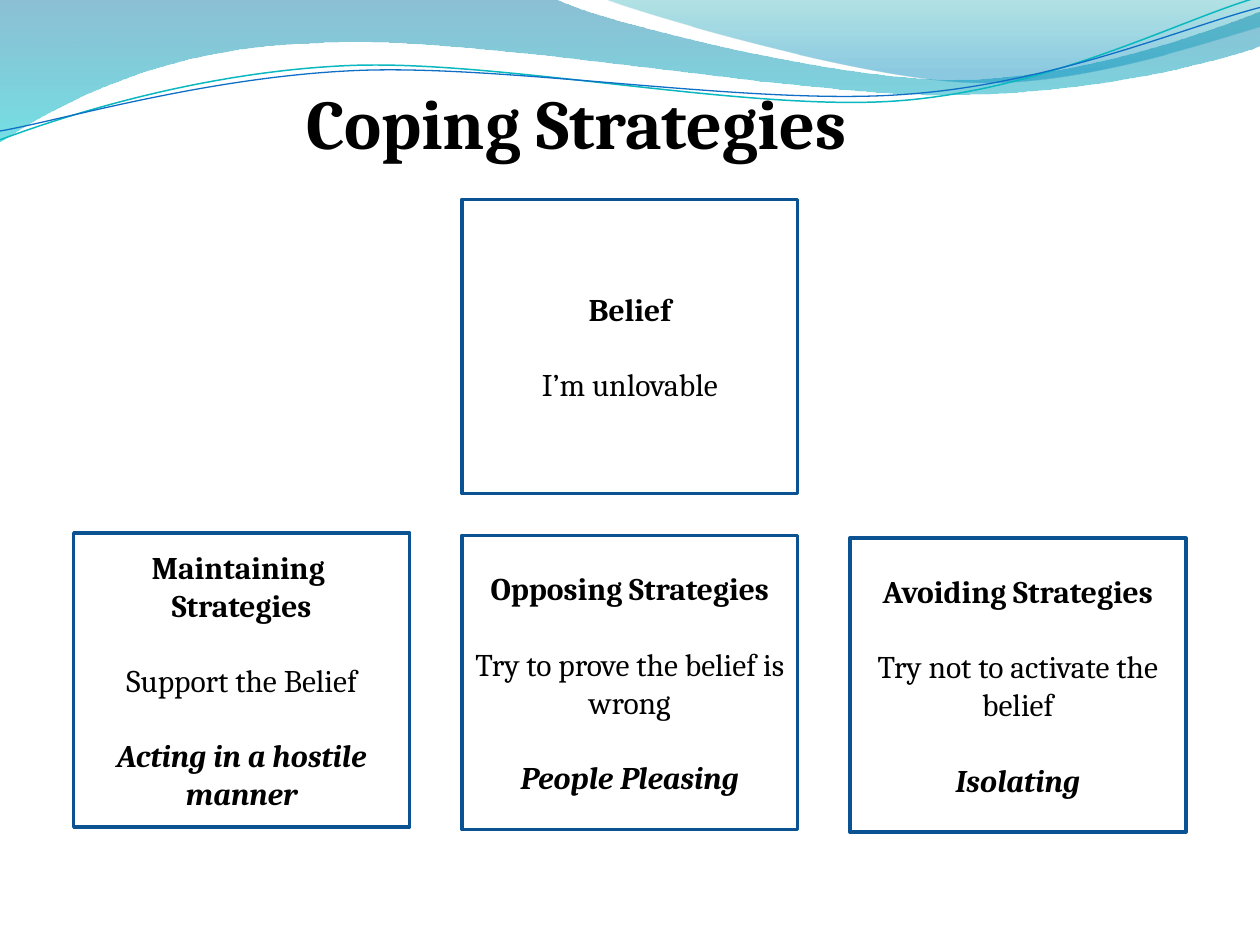
from itertools import chain
from math import cos, radians, sin

from lxml.etree import SubElement
from pptx import Presentation
from pptx.dml.color import RGBColor
from pptx.enum.shapes import MSO_SHAPE
from pptx.enum.text import MSO_ANCHOR, MSO_AUTO_SIZE, PP_ALIGN
from pptx.oxml.ns import qn
from pptx.util import Inches, Pt

TITLE_ONLY = 5

# Each outline is a start point followed by lines (one point) and Bezier curves (three points).
BROAD_WAVE = [
    [(0, 0)], [(4.4, -0.01)],
    [(4.76, 0.17), (6.64, 0.63), (7.58, 0.63)],
    [(8.53, 0.63), (9.58, 0.26), (10, 0.09)],
    [(10.01, 0.36)],
    [(9.83, 0.44), (8.7, 0.76), (7.46, 0.75)],
    [(6.22, 0.75), (3.82, 0.28), (2.57, 0.34)],
    [(1.29, 0.36), (0.46, 0.83), (-0.01, 1.13)],
    [(0, 0)],
]
RIGHT_WAVE = [
    [(4.79, -0.01)],
    [(5.09, 0.11), (6.82, 0.62), (7.69, 0.65)],
    [(8.56, 0.69), (9.61, 0.32), (10, 0.21)],
    [(10, 0)], [(4.79, -0.01)],
]
TEAL_STROKE = [
    [(0, 1.11)],
    [(0.48, 0.93), (1.58, 0.57), (2.77, 0.52)],
    [(3.95, 0.47), (5.93, 0.89), (7.13, 0.8)],
    [(8.33, 0.71), (9.38, 0.15), (9.98, -0.02)],
]
BLUE_STROKE = [
    [(0, 1.04)],
    [(0.47, 0.96), (1.64, 0.61), (2.83, 0.56)],
    [(4.03, 0.51), (5.97, 0.84), (7.17, 0.75)],
    [(8.36, 0.67), (9.41, 0.21), (10, 0.06)],
]
STROKE_TILT = 357.3

# Heading lines, explanation, example; one strategy a column
STRATEGIES = [
    (["Maintaining ", "Strategies"], "Support the Belief", "Acting in a hostile manner"),
    (["Opposing Strategies"], "Try to prove the belief is wrong", "People Pleasing"),
    (["Avoiding Strategies"], "Try not to activate the belief", "Isolating"),
]


def rgb(hex_colour):
    return RGBColor.from_string(hex_colour)


def untilt(outline, centre, tilt):
    """Turn an outline back by its tilt, so that the shape's rotation restores it."""
    angle, (cx, cy) = radians(-tilt), centre
    return [[(cx + (x - cx) * cos(angle) - (y - cy) * sin(angle),
              cy + (x - cx) * sin(angle) + (y - cy) * cos(angle)) for x, y in step]
            for step in outline]


class CopingSlide:
    font = "Cambria"
    ink = "000000"
    paper = "FFFFFF"
    border = "0B5292"
    body_size = 18
    title_size = 40
    box_width, box_height = 8 / 3, 7 / 3
    grid_left, grid_top = 0.585, 19 / 12
    column_pitch, row_pitch = 3.08, 8 / 3

    def __init__(self, presentation):
        self.slide = presentation.slides.add_slide(presentation.slide_layouts[TITLE_ONLY])

    def style(self, paragraph, size, bold=False, italic=False):
        for run in paragraph.runs:
            font = run.font
            font.name, font.size = self.font, Pt(size)
            font.bold, font.italic = bold, italic
            font.color.rgb = rgb(self.ink)

    def outline(self, steps, close):
        """Draw a freeform whose three-point steps become true Bezier curves."""
        start, *rest = [(Inches(x), Inches(y)) for x, y in chain.from_iterable(steps)]
        builder = self.slide.shapes.build_freeform(*start)
        builder.add_line_segments(rest, close=close)
        shape = builder.convert_to_shape()
        shape.shadow.inherit = False
        drawn_path = next(shape.element.iter(qn("a:path")))
        segments = iter(drawn_path.findall(qn("a:lnTo")))
        for step in steps[1:]:
            lines = [next(segments) for _ in step]
            if len(lines) == 3:
                curve = SubElement(drawn_path, qn("a:cubicBezTo"))
                lines[0].addprevious(curve)
                for line in lines:
                    curve.append(line[0])
                    drawn_path.remove(line)
        return shape

    def wave(self, steps, stops):
        """Draw a closed wave; stops are (position, colour, opacity) from top to bottom."""
        shape = self.outline(steps, close=True)
        shape.line.fill.background()
        shape.fill.gradient()
        shape.fill.gradient_angle = 270
        for stop, (position, colour, _) in zip(shape.fill.gradient_stops, stops):
            stop.position = position
            stop.color.rgb = rgb(colour)
        gradient_colours = shape.element.spPr.iter(qn("a:srgbClr"))
        for colour_element, (_, _, opacity) in zip(gradient_colours, stops):
            SubElement(colour_element, qn("a:alpha")).set("val", str(opacity * 1000))

    def stroke(self, steps, centre, colour, width):
        shape = self.outline(untilt(steps, centre, STROKE_TILT), close=False)
        shape.rotation = STROKE_TILT
        shape.fill.background()
        shape.line.color.rgb = rgb(colour)
        shape.line.width = Pt(width)

    def title(self, text):
        title = self.slide.shapes.title
        self.slide.shapes.element.append(title.element)  # in front of the waves
        title.left, title.top = Inches(2.33), Inches(0.58)
        title.width, title.height = Inches(5.33), Inches(0.77)
        frame = title.text_frame
        frame.text = text
        frame.auto_size = MSO_AUTO_SIZE.NONE
        frame.vertical_anchor = MSO_ANCHOR.TOP
        frame.paragraphs[0].alignment = PP_ALIGN.LEFT
        self.style(frame.paragraphs[0], self.title_size, bold=True)

    def box(self, column, row, heading, explanation, example=None):
        shape = self.slide.shapes.add_shape(
            MSO_SHAPE.RECTANGLE,
            Inches(self.grid_left + column * self.column_pitch),
            Inches(self.grid_top + row * self.row_pitch),
            Inches(self.box_width), Inches(self.box_height))
        shape.shadow.inherit = False
        shape.fill.solid()
        shape.fill.fore_color.rgb = rgb(self.paper)
        shape.line.color.rgb = rgb(self.border)
        shape.line.width = Pt(2)

        frame = shape.text_frame
        frame.word_wrap = True
        frame.vertical_anchor = MSO_ANCHOR.MIDDLE
        parts = heading + [explanation] + ([example] if example else [])
        frame.text = "\n".join(parts)
        for i, paragraph in enumerate(frame.paragraphs):
            paragraph.alignment = PP_ALIGN.CENTER
            if i >= len(heading):
                paragraph.space_before = Pt(21.5)
            self.style(paragraph, self.body_size,
                       bold=i != len(heading), italic=i > len(heading))


def main():
    presentation = Presentation()
    presentation.slide_width, presentation.slide_height = Inches(10), Inches(7.5)
    slide = CopingSlide(presentation)
    slide.wave(BROAD_WAVE, [(0, "0074A1", 45), (1, "00C6CF", 55)])
    slide.wave(RIGHT_WAVE, [(0, "00A1A9", 30), (0.8, "008BBF", 45)])
    slide.stroke(TEAL_STROKE, (4.99, 0.58), "0AB8BF", 0.85)
    slide.stroke(BLUE_STROKE, (5, 0.59), "0F6FC6", 0.75)
    for column, strategy in enumerate(STRATEGIES):
        row = 1 + (column - 1) / 130  # each box sits slightly lower than the one before
        slide.box(column, row, *strategy)
    slide.title("Coping Strategies")
    slide.box(1, 0, ["Belief"], "I’m unlovable")
    presentation.save("out.pptx")


if __name__ == "__main__":
    main()
